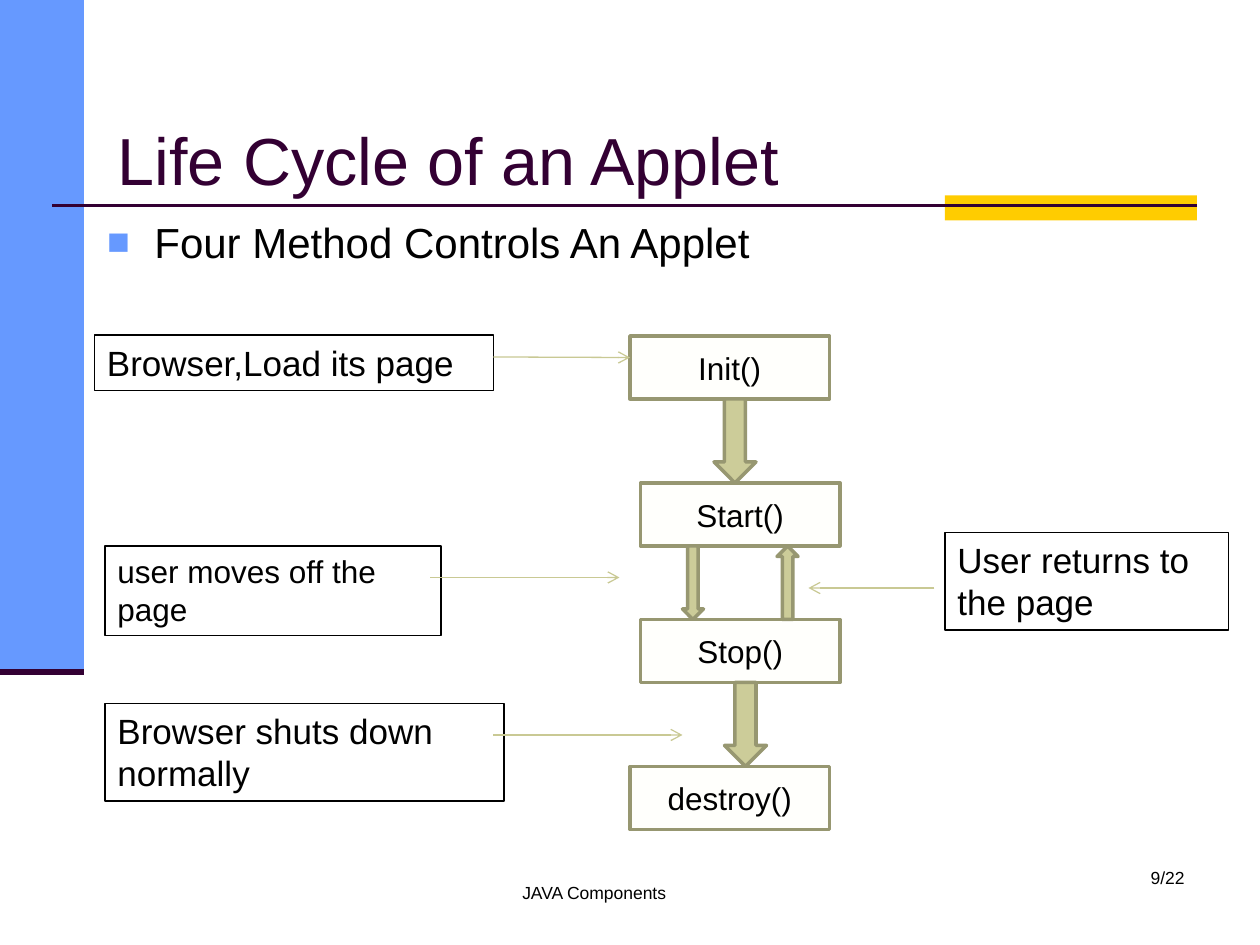
import pptx
import pptx.util
import pptx.dml.color
import pptx.enum.shapes
import pptx.enum.text
import pptx.oxml
import pptx.oxml.ns

Pt = pptx.util.Pt
Color = pptx.dml.color.RGBColor
Kind = pptx.enum.shapes.MSO_SHAPE
Align = pptx.enum.text.PP_ALIGN
Anchor = pptx.enum.text.MSO_ANCHOR
Fit = pptx.enum.text.MSO_AUTO_SIZE

BLUE = Color(0x66, 0x99, 0xFF)
GOLD = Color(0xFF, 0xCC, 0x00)
PLUM = Color(0x33, 0x00, 0x33)
BLACK = Color(0x00, 0x00, 0x00)
IVORY = Color(0xFF, 0xFF, 0xFC)
OLIVE = Color(0x97, 0x97, 0x71)
KHAKI = Color(0xCC, 0xCC, 0x99)
SAGE = Color(0xC9, 0xC9, 0x94)


def node(tag, **attrs):
    item = pptx.oxml.parse_xml(f"<a:{tag} {pptx.oxml.ns.nsdecls('a')}/>")
    for key, value in attrs.items():
        item.set(key, value)
    return item


def write(frame, text, size, color=BLACK, align=Align.LEFT, anchor=Anchor.TOP):
    frame.word_wrap = True
    frame.auto_size = Fit.NONE
    frame.vertical_anchor = anchor
    para = frame.paragraphs[0]
    para.alignment = align
    run = para.add_run()
    run.text = text
    run.font.name = "Arial"
    run.font.size = Pt(size)
    run.font.color.rgb = color
    return para


def place(shape, left, top, width, height):
    shape.left, shape.top = Pt(left), Pt(top)
    shape.width, shape.height = Pt(width), Pt(height)


def block(slide, kind, area, fill, edge=None):
    shape = slide.shapes.add_shape(kind, *map(Pt, area))
    shape.shadow.inherit = False
    shape.fill.solid()
    shape.fill.fore_color.rgb = fill
    if edge is None:
        shape.line.fill.background()
    else:
        shape.line.color.rgb = edge
        shape.line.width = Pt(2)
    return shape


def label(slide, text, area, size, align=Align.LEFT):
    box = slide.shapes.add_textbox(*map(Pt, area))
    write(box.text_frame, text, size, align=align)
    return box


def note(slide, text, area, size):
    box = label(slide, text, area, size)
    box.line.color.rgb = BLACK
    box.line.width = Pt(0.75)


def rule(slide, ends, color, width, head=False):
    line = slide.shapes.add_connector(
        pptx.enum.shapes.MSO_CONNECTOR.STRAIGHT, *map(Pt, ends))
    line.line.color.rgb = color
    line.line.width = Pt(width)
    if head:
        line.line._get_or_add_ln().append(node("tailEnd", type="arrow"))
    line._element.spPr.append(node("effectLst"))


def decor(slide):
    block(slide, Kind.RECTANGLE, (0, 0, 48, 384), BLUE)
    block(slide, Kind.RECTANGLE, (540, 111.6, 144, 14.4), GOLD)
    rule(slide, (30, 117.5, 684, 117.5), PLUM, 1.5)
    rule(slide, (0, 384, 48, 384), PLUM, 3.5)


def heading(slide):
    title = slide.shapes.title
    place(title, 60, 55.5, 648, 70.5)
    write(title.text_frame, "Life Cycle of an Applet", 38, PLUM,
          anchor=Anchor.MIDDLE)


def bullet(slide):
    body = slide.placeholders[1]
    place(body, 54, 120, 630, 426)
    para = write(body.text_frame, "Four Method Controls An Applet", 24)
    para.space_before = Pt(4.8)
    props = para._p.get_or_add_pPr()
    props.set("marL", str(Pt(27)))
    props.set("indent", str(-Pt(27)))
    tint = node("buClr")
    tint.append(node("srgbClr", val=str(BLUE)))
    for item in (tint, node("buSzPct", val="90000"),
                 node("buFont", typeface="Arial"), node("buChar", char="■")):
        props.append(item)


def states(slide):
    for text, left, top in (("Init()", 360, 192), ("Start()", 366, 276),
                            ("Stop()", 366, 354), ("destroy()", 360, 438)):
        box = block(slide, Kind.RECTANGLE, (left, top, 114, 36), IVORY, OLIVE)
        write(box.text_frame, text, 18, align=Align.CENTER,
              anchor=Anchor.MIDDLE)


def moves(slide):
    for area, turn in (((408, 228, 24, 48), 0), ((414, 390, 24, 48), 0),
                       ((390, 312, 12, 42), 0), ((444, 312, 12, 42), 180)):
        arrow = block(slide, Kind.DOWN_ARROW, area, KHAKI, OLIVE)
        arrow.rotation = turn


def events(slide):
    for text, area, size, ends in (
        ("Browser,Load its page", (54, 191.5, 228, 31.5), 20,
         (282, 204, 360, 204.3)),
        ("user moves off the page", (60, 312, 192, 51), 18,
         (246, 330, 354, 330)),
        ("User returns to the page", (540, 304.3, 162, 55.7), 20,
         (534, 336, 462, 336)),
        ("Browser shuts down normally", (60, 402, 228, 55.7), 20,
         (282, 420, 390, 420)),
    ):
        note(slide, text, area, size)
        rule(slide, ends, SAGE, 0.75, head=True)


def main():
    deck = pptx.Presentation()
    deck.slide_width, deck.slide_height = Pt(720), Pt(540)
    slide = deck.slides.add_slide(deck.slide_layouts[1])
    decor(slide)
    heading(slide)
    bullet(slide)
    label(slide, "JAVA Components", (265, 500.5, 149, 29), 10, Align.CENTER)
    label(slide, "9/22", (534, 492, 150, 36), 10, Align.RIGHT)
    states(slide)
    moves(slide)
    events(slide)
    deck.save("out.pptx")


if __name__ == "__main__":
    main()
